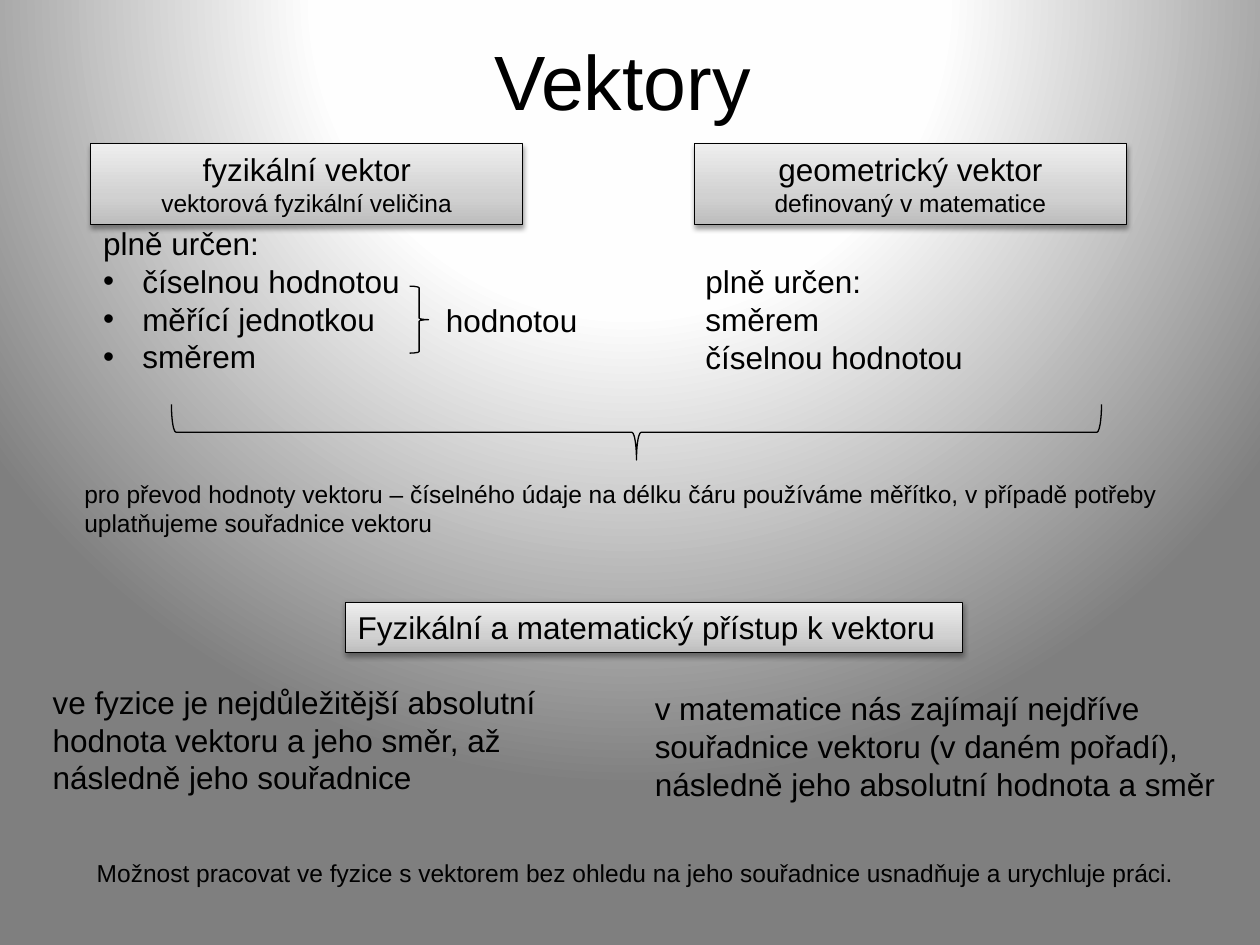
from lxml import etree
from pptx import Presentation
from pptx.dml.color import RGBColor
from pptx.enum.shapes import MSO_SHAPE
from pptx.enum.text import MSO_ANCHOR, PP_ALIGN
from pptx.oxml import parse_xml
from pptx.oxml.ns import nsdecls, qn
from pptx.util import Cm, Pt

RECTANGLE = MSO_SHAPE.RECTANGLE
RIGHT_BRACE = MSO_SHAPE.RIGHT_BRACE
LEFT, CENTER = PP_ALIGN.LEFT, PP_ALIGN.CENTER
TOP, MIDDLE = MSO_ANCHOR.TOP, MSO_ANCHOR.MIDDLE
BLACK = "000000"
BOX_STOPS = [(0, "BDBDBD"), (35, "D1D1D1"), (100, "EEEEEE")]
BACKGROUND_STOPS = [(0, "FFFFFF"), (40, "FEFEFE"), (100, "7F7F7F")]
UPWARD = '<a:lin ang="16200000" scaled="0"/>'
FROM_ABOVE = ('<a:path path="circle"><a:fillToRect l="50000" t="-80000" '
              'r="50000" b="180000"/></a:path>')
SHADOW = (f'<a:outerShdw {nsdecls("a")} blurRad="40000" dist="20000" dir="5400000" '
          f'rotWithShape="0"><a:srgbClr val="{BLACK}"><a:alpha val="38000"/>'
          '</a:srgbClr></a:outerShdw>')


def gradient(stops, direction):
    stop_xml = "".join(f'<a:gs pos="{position * 1000}"><a:srgbClr val="{color}"/></a:gs>'
                       for position, color in stops)
    return parse_xml(f'<a:gradFill {nsdecls("a")} rotWithShape="1">'
                     f'<a:gsLst>{stop_xml}</a:gsLst>{direction}</a:gradFill>')


def write(shape, text, sizes=(18,), align=LEFT, anchor=TOP, spacing=None, bullets_from=None):
    frame = shape.text_frame
    frame.word_wrap = True
    frame.vertical_anchor = anchor
    frame.text = text
    for index, paragraph in enumerate(frame.paragraphs):
        if bullets_from is not None and index >= bullets_from:
            properties = paragraph._p.get_or_add_pPr()
            properties.set("marL", str(Cm(0.79)))
            properties.set("indent", str(-Cm(0.79)))
            etree.SubElement(properties, qn("a:buFont")).set("typeface", "Arial")
            etree.SubElement(properties, qn("a:buChar")).set("char", "•")
        paragraph.alignment = align
        if spacing:
            paragraph.line_spacing = spacing
        paragraph.font.name = "Arial"
        paragraph.font.size = Pt(sizes[min(index, len(sizes) - 1)])
        paragraph.font.color.rgb = RGBColor.from_string(BLACK)


presentation = Presentation()
presentation.slide_width = Cm(25.4)
presentation.slide_height = Cm(19.05)
slide = presentation.slides.add_slide(presentation.slide_layouts[6])

slide.background.fill.solid()
background_fill = slide.element.find(".//" + qn("a:solidFill"))
background_fill.getparent().replace(background_fill, gradient(BACKGROUND_STOPS, FROM_ABOVE))

texts = [
    ((-0.3, 0.15, 25.7, 1.98), "Vektory",
     dict(sizes=(44,), align=CENTER, anchor=MIDDLE, spacing=1.5)),
    ((1.83, 4.39, 8.38, 3.33), "plně určen:\nčíselnou hodnotou\nměřící jednotkou\nsměrem",
     dict(bullets_from=1)),
    ((13.97, 5.16, 8.26, 2.57), "plně určen:\nsměrem\nčíselnou hodnotou", {}),
    ((1.45, 9.53, 23.01, 1.44),
     "pro převod hodnoty vektoru – číselného údaje na délku čáru používáme měřítko, "
     "v případě potřeby uplatňujeme souřadnice vektoru", dict(sizes=(14,))),
    ((8.74, 5.94, 3.38, 1.02), "hodnotou", {}),
    ((1.7, 17.17, 22.25, 0.86),
     "Možnost pracovat ve fyzice s vektorem bez ohledu na jeho souřadnice usnadňuje "
     "a urychluje práci.", dict(sizes=(14,))),
    ((12.95, 13.77, 12.7, 2.57),
     "v matematice nás zajímají nejdříve souřadnice vektoru (v daném pořadí), "
     "následně jeho absolutní hodnota a směr", {}),
    ((0.81, 13.64, 11.63, 2.57),
     "ve fyzice je nejdůležitější absolutní hodnota vektoru a jeho směr, "
     "až následně jeho souřadnice", {}),
]
for position, text, text_format in texts:
    write(slide.shapes.add_textbox(*map(Cm, position)), text, **text_format)

for position, rotation in [((12.27, -0.66, 1.12, 18.75), 90), ((8.26, 5.77, 0.38, 1.35), 0)]:
    brace = slide.shapes.add_shape(RIGHT_BRACE, *map(Cm, position))
    brace.rotation = rotation
    brace.shadow.inherit = False
    brace.fill.background()
    brace.line.color.rgb = RGBColor.from_string(BLACK)
    brace.line.width = Pt(0.75)

heading_format = dict(sizes=(18, 14), align=CENTER)
boxes = [
    ((6.96, 12.14, 12.45, 1.02), "Fyzikální a matematický přístup k vektoru", {}),
    ((1.83, 2.9, 8.71, 1.63), "fyzikální vektor\nvektorová fyzikální veličina", heading_format),
    ((14, 2.9, 8.71, 1.63), "geometrický vektor\ndefinovaný v matematice", heading_format),
]
for position, text, text_format in boxes:
    box = slide.shapes.add_shape(RECTANGLE, *map(Cm, position))
    box.fill.background()
    properties = box._element.spPr
    properties.replace(properties.find(qn("a:noFill")), gradient(BOX_STOPS, UPWARD))
    box.line.color.rgb = RGBColor.from_string(BLACK)
    box.line.width = Pt(0.75)
    box.shadow.inherit = False
    properties.find(qn("a:effectLst")).append(parse_xml(SHADOW))
    write(box, text, **text_format)

presentation.save("out.pptx")
